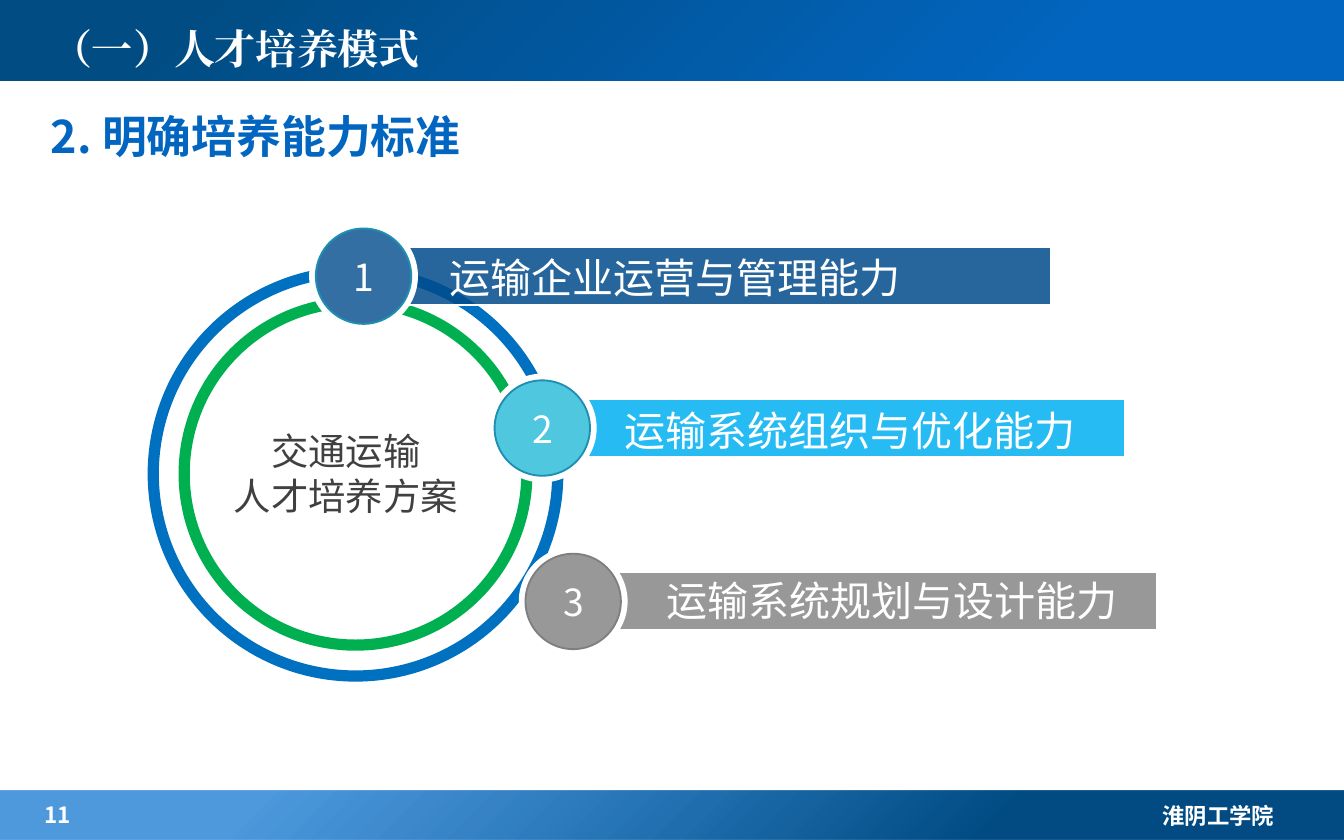
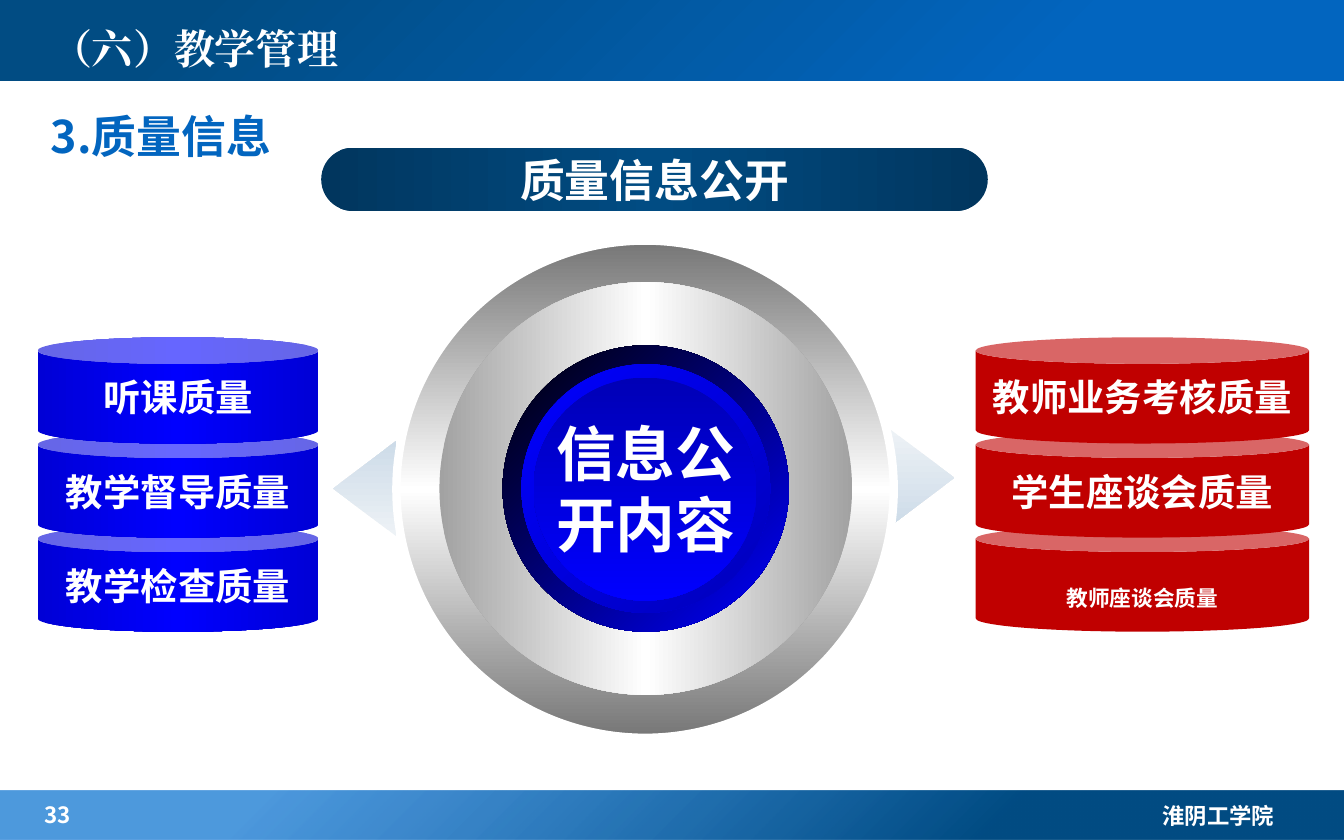
"""Build two slides on training ability standards and published quality information."""
from lxml.etree import SubElement
from pptx import Presentation
from pptx.dml.color import RGBColor
from pptx.enum.shapes import MSO_SHAPE
from pptx.enum.text import MSO_ANCHOR, MSO_AUTO_SIZE, PP_ALIGN
from pptx.oxml.ns import qn
from pptx.util import Pt

PX = 9144
SANS = "Noto Sans CJK SC"
COLORS = {
    "white": "FFFFFF", "text": "404040", "navy": "014C83", "royal": "0265BF",
    "sky": "026DCE", "night": "01365E", "ring": "0070C0", "green": "00B050",
    "steel": "014C8D", "cyan": "00B0F0", "aqua": "22BAD8", "teal": "1E8FB2",
    "gray": "7F7F7F", "rim": "767676", "silver": "A2A2A2", "mist": "CDDBE8",
    "haze": "EDF2F6", "black": "000000", "blue": "0000FF", "can": "0000D6",
    "deep": "0000BA", "core": "0000B6", "red": "C00000",
}


def add_shape(s, kind, box, fill=None, line=None, alpha=100, angle=0):
    """Add a preset shape; fill is a colour name or a list of (position, colour, alpha)."""
    sp = s.shapes.add_shape(kind, *[v * PX for v in box])
    sp.shadow.inherit = False
    if fill is None:
        sp.fill.background()
    elif isinstance(fill, str):
        sp.fill.solid()
        sp.fill.fore_color.rgb = RGBColor.from_string(COLORS[fill])
        if alpha < 100:
            clr = sp.element.spPr.find(qn("a:solidFill"))[0]
            SubElement(clr, qn("a:alpha"), val=str(alpha * 1000))
    else:
        sp.fill.gradient()
        grad = sp.element.spPr.find(qn("a:gradFill"))
        for child in list(grad):
            grad.remove(child)
        stops = SubElement(grad, qn("a:gsLst"))
        for pos, color, opacity in fill:
            gs = SubElement(stops, qn("a:gs"), pos=str(pos * 1000))
            clr = SubElement(gs, qn("a:srgbClr"), val=COLORS[color])
            if opacity < 100:
                SubElement(clr, qn("a:alpha"), val=str(opacity * 1000))
        if angle is None:
            around = SubElement(grad, qn("a:path"), path="circle")
            SubElement(around, qn("a:fillToRect"), l="100000", t="100000")
        else:
            SubElement(grad, qn("a:lin"), ang=str(angle * 60000), scaled="0")
    if line:
        sp.line.color.rgb = RGBColor.from_string(COLORS[line[0]])
        sp.line.width = Pt(line[1])
    else:
        sp.line.fill.background()
    return sp


def add_text(s, target, lines, size, color="white", bold=False, font=SANS,
             align=PP_ALIGN.LEFT, wrap=True, anchor=MSO_ANCHOR.TOP):
    """Write lines into a shape, or into a new text box when target is a box."""
    if isinstance(target, tuple):
        target = s.shapes.add_textbox(*[v * PX for v in target])
    tf = target.text_frame
    frame = {"word_wrap": wrap, "vertical_anchor": anchor, "auto_size": MSO_AUTO_SIZE.NONE}
    for name, value in frame.items():
        setattr(tf, name, value)
    for i, line in enumerate(lines.split("\n")):
        p = tf.add_paragraph() if i else tf.paragraphs[0]
        p.alignment = align
        r = p.add_run()
        r.text = line
        for name, value in {"size": Pt(size), "bold": bold, "name": font}.items():
            setattr(r.font, name, value)
        r.font.color.rgb = RGBColor.from_string(COLORS[color])
        SubElement(r.font._element, qn("a:ea"), typeface=font)
    return target


prs = Presentation()
prs.slide_width, prs.slide_height = 1000 * PX, 625 * PX
layout = prs.slide_layouts[5]
for ph in list(layout.placeholders)[1:]:
    ph.element.getparent().remove(ph.element)

pages = [
    ("（一）人才培养模式", "2. 明确培养能力标准", 342, "11"),
    ("（六）教学管理", "3.质量信息", 190, "33"),
]
slides = [prs.slides.add_slide(layout) for page in pages]

s = slides[0]
footer = add_shape(s, MSO_SHAPE.RECTANGLE, (0, 588, 1000, 37),
                   [(26, "navy", 100), (80, "sky", 70)], angle=None)
header = add_shape(s, MSO_SHAPE.RECTANGLE, (0, -3, 1000, 63),
                   [(21, "royal", 100), (86, "navy", 100)], angle=None)
school = add_text(s, (855, 592, 146, 33), "淮阴工学院", 12, bold=True)
for sp in (footer, header, school):
    layout.shapes.element.append(sp.element)

for s, (title, heading, width, number) in zip(slides, pages):
    sp = s.shapes.title
    sp.left, sp.top, sp.width, sp.height = [v * PX for v in (28, 0, 638, 71)]
    add_text(s, sp, title, 22, bold=True, font="Times New Roman", anchor=MSO_ANCHOR.MIDDLE)
    add_text(s, (28, 76, width, 50), heading, 24, "royal", bold=True)
    add_text(s, (23, 591, 154, 26), number, 12, bold=True)

s = slides[0]
CENTER = PP_ALIGN.CENTER
add_shape(s, MSO_SHAPE.OVAL, (114, 202, 301, 301), line=("ring", 6))
add_shape(s, MSO_SHAPE.OVAL, (137, 225, 255, 255), "white", ("green", 6), alpha=25)
add_text(s, (159, 314, 197, 77), "交通运输\n人才培养方案", 20, "text", align=CENTER)

abilities = [
    ("运输企业运营与管理能力", (230, 165), (304, 478), (325, 183, 373), "steel", "steel", "teal"),
    ("运输系统组织与优化能力", (363, 278), (437, 400), (455, 297, 361), "cyan", "aqua", "teal"),
    ("运输系统规划与设计能力", (386, 407), (453, 408), (486, 423, 362), "gray", "gray", "gray"),
]
for n, (label, (x, y), (bar_x, bar_w), label_box, bar, disc, edge) in enumerate(abilities, 1):
    add_shape(s, MSO_SHAPE.RECTANGLE, (bar_x, y + 19, bar_w, 43), bar, ("white", 1),
              alpha=80 if bar == "gray" else 85)
    add_text(s, (*label_box, 47), label, 22)
    add_shape(s, MSO_SHAPE.OVAL, (x, y, 81, 81), "white")
    add_shape(s, MSO_SHAPE.OVAL, (x + 5, y + 5, 71, 71), disc, (edge, 1), alpha=80)
    add_text(s, (x, y + 19, 82, 44), str(n), 20, align=CENTER)

s = slides[1]
for x, y, turn in [(236, 340, 270), (651, 332, 90)]:
    arrow = add_shape(s, MSO_SHAPE.UP_ARROW, (x, y, 71, 47),
                      [(0, "haze", 100), (100, "mist", 100)])
    arrow.rotation = turn
    arrow.adjustments[0], arrow.adjustments[1] = 0.52, 1

discs = [
    ((295, 179, 370), ("rim", "white", "rim"), 90, ("white", 4.5)),
    ((327, 210, 307), ("silver", "white", "silver"), 0, None),
    ((374, 257, 213), ("black", "blue"), 45, None),
    ((388, 271, 185), ("blue", "deep"), 45, None),
    ((397, 281, 166), ("core", "blue"), 90, None),
]
for (x, y, size), colors, angle, line in discs:
    stops = [(100 * i // (len(colors) - 1), c, 100) for i, c in enumerate(colors)]
    add_shape(s, MSO_SHAPE.OVAL, (x, y, size, size), stops, line, angle=angle)
add_text(s, (403, 305, 155, 118), "信息公\n开内容", 32, bold=True, font="Cabin",
         align=CENTER, wrap=False)

stacks = [
    (28, 209, [(0, "can", 100), (50, "blue", 100), (100, "can", 100)],
     ["教学检查质量", "教学督导质量", "听课质量"]),
    (726, 248, "red", ["教师座谈会质量", "学生座谈会质量", "教师业务考核质量"]),
]
for x, width, fill, labels in stacks:
    for i, label in enumerate(labels):
        can = add_shape(s, MSO_SHAPE.CAN, (x, 391 - 70 * i, width, 79), fill)
        can.adjustments[0] = 0.25
        add_text(s, can, label, 20, bold=True, align=CENTER, wrap=False,
                 anchor=MSO_ANCHOR.MIDDLE)
        if label == "教师座谈会质量":
            can.text_frame.paragraphs[0].runs[0].font._element.set("baseline", "-25000")

banner = add_shape(s, MSO_SHAPE.ROUNDED_RECTANGLE, (239, 110, 496, 47),
                   [(0, "night", 100), (50, "navy", 100), (100, "night", 100)])
banner.adjustments[0] = 0.5
add_text(s, banner, "质量信息公开", 24, bold=True, align=CENTER, wrap=False,
         anchor=MSO_ANCHOR.MIDDLE)

prs.save("out.pptx")
